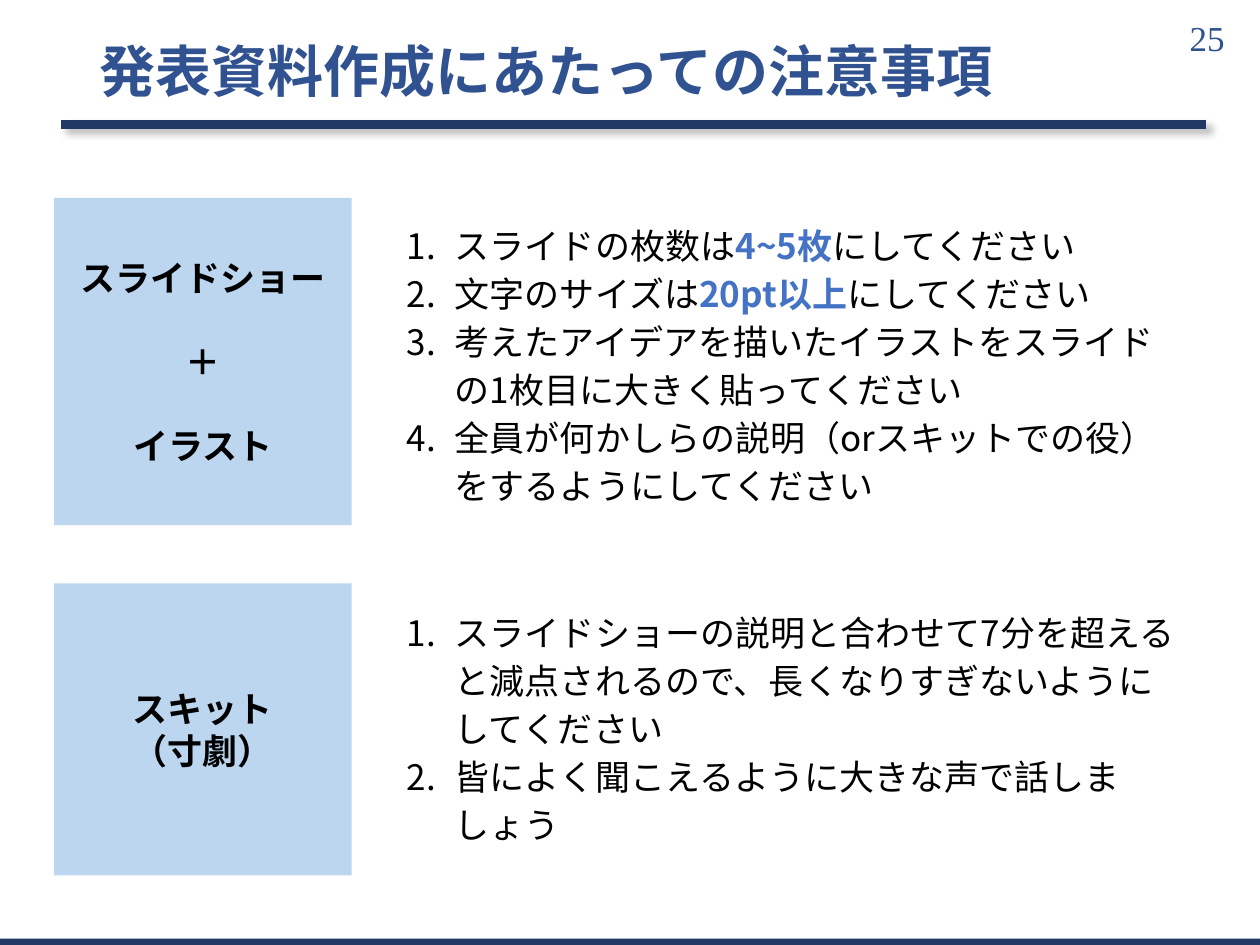
"""Build the slide of cautions for preparing presentation materials."""
from lxml.etree import SubElement
from pptx import Presentation
from pptx.dml.color import RGBColor
from pptx.enum.shapes import MSO_CONNECTOR as Connector, MSO_SHAPE as Shape
from pptx.enum.text import MSO_ANCHOR as Anchor, PP_ALIGN as Align
from pptx.oxml.ns import qn
from pptx.util import Cm, Pt

NAVY = RGBColor(0x1F, 0x38, 0x64)
FOOTER_NAVY = RGBColor(0x21, 0x39, 0x64)
TITLE_BLUE = RGBColor(0x30, 0x52, 0x90)
ACCENT = RGBColor(0x44, 0x72, 0xC4)
PALE_BLUE = RGBColor(0xBB, 0xD6, 0xEE)
BLACK = RGBColor(0, 0, 0)
SANS, SERIF = "Noto Sans CJK JP", "Times New Roman"

TITLE = "発表資料作成にあたっての注意事項"
PAGE_NUMBER = "25"
SECTIONS = [
    {
        "label": ["スライドショー", "＋", "イラスト"],
        "label_gap": 24,
        "label_top": 3.99, "label_height": 6.6,
        "list_top": 4.29, "list_height": 6.35,
        "items": [
            ["スライドの枚数は", "4~5枚", "にしてください"],
            ["文字のサイズは", "20pt以上", "にしてください"],
            ["考えたアイデアを描いたイラストをスライドの1枚目に大きく貼ってください"],
            ["全員が何かしらの説明（orスキットでの役）をするようにしてください"],
        ],
    },
    {
        "label": ["スキット", "（寸劇）"],
        "label_gap": 0,
        "label_top": 11.76, "label_height": 5.89,
        "list_top": 12.09, "list_height": 5.18,
        "items": [
            ["スライドショーの説明と合わせて7分を超えると減点されるので、長くなりすぎないようにしてください"],
            ["皆によく聞こえるように大きな声で話しましょう"],
        ],
    },
]
LABEL_LEFT, LABEL_WIDTH = 1.09, 6.0
LIST_LEFT, LIST_WIDTH = 7.95, 16.0
HANGING = Cm(0.97)


def add_span(para, text, size, color, bold=False, face=SANS):
    span = para.add_run()
    span.text = text
    span.font.size, span.font.bold, span.font.name = Pt(size), bold, face
    span.font.color.rgb = color
    SubElement(span.font._element, qn("a:ea"), typeface=face)


def add_box(page, left, top, width, height, anchor=Anchor.TOP):
    box = page.shapes.add_textbox(Cm(left), Cm(top), Cm(width), Cm(height))
    box.text_frame.word_wrap = True
    box.text_frame.vertical_anchor = anchor
    return box.text_frame


def add_block(page, left, top, width, height, color):
    block = page.shapes.add_shape(Shape.RECTANGLE, Cm(left), Cm(top), Cm(width), Cm(height))
    block.shadow.inherit = False
    block.fill.solid()
    block.fill.fore_color.rgb = color
    block.line.fill.background()
    return block.text_frame


def paragraphs(frame, entries):
    for index, entry in enumerate(entries):
        yield index, frame.add_paragraph() if index else frame.paragraphs[0], entry


def add_label(page, section):
    frame = add_block(page, LABEL_LEFT, section["label_top"], LABEL_WIDTH,
                      section["label_height"], PALE_BLUE)
    frame.word_wrap = True
    frame.vertical_anchor = Anchor.MIDDLE
    for index, para, text in paragraphs(frame, section["label"]):
        para.alignment = Align.CENTER
        if index:
            para.space_before = Pt(section["label_gap"])
        add_span(para, text, 20, BLACK, bold=True)


def add_list(page, section):
    frame = add_box(page, LIST_LEFT, section["list_top"], LIST_WIDTH, section["list_height"])
    for _, para, pieces in paragraphs(frame, section["items"]):
        para.line_spacing = 1.14
        props = para._p.get_or_add_pPr()
        props.set("marL", str(HANGING))
        props.set("indent", str(-HANGING))
        color = SubElement(props, qn("a:buClr"))
        SubElement(color, qn("a:srgbClr"), val=str(BLACK))
        SubElement(props, qn("a:buFont"), typeface=SANS)
        SubElement(props, qn("a:buAutoNum"), type="arabicPeriod")
        for place, text in enumerate(pieces):
            strong = place == 1
            add_span(para, text, 20, ACCENT if strong else BLACK, strong)


def add_title_rule(page):
    rule = page.shapes.add_connector(Connector.STRAIGHT, Cm(1.22), Cm(2.51), Cm(24.31), Cm(2.51))
    rule.line.color.rgb = NAVY
    rule.line.width = Pt(5)
    effects = SubElement(rule._element.spPr, qn("a:effectLst"))
    shadow = SubElement(effects, qn("a:outerShdw"), blurRad=str(Pt(4)), dist=str(Pt(4)),
                        dir=str(45 * 60000), algn="tl", rotWithShape="0")
    color = SubElement(shadow, qn("a:srgbClr"), val=str(BLACK))
    SubElement(color, qn("a:alpha"), val="25000")


def main():
    deck = Presentation()
    deck.slide_width, deck.slide_height = Cm(25.4), Cm(19.05)
    page = deck.slides.add_slide(deck.slide_layouts[6])

    number = add_box(page, 23.39, 0.25, 1.55, 1.02, Anchor.MIDDLE).paragraphs[0]
    number.alignment = Align.RIGHT
    add_span(number, PAGE_NUMBER, 20, TITLE_BLUE, face=SERIF)

    add_title_rule(page)
    add_block(page, 0, 18.92, 25.4, 0.13, FOOTER_NAVY)

    heading = add_box(page, 1.75, 0.48, 23.65, 2.03, Anchor.MIDDLE)
    heading.margin_top = heading.margin_bottom = 0
    heading.paragraphs[0].line_spacing = 0.9
    add_span(heading.paragraphs[0], TITLE, 32, TITLE_BLUE, bold=True)

    for section in SECTIONS:
        add_label(page, section)
        add_list(page, section)
    deck.save("out.pptx")


if __name__ == "__main__":
    main()
